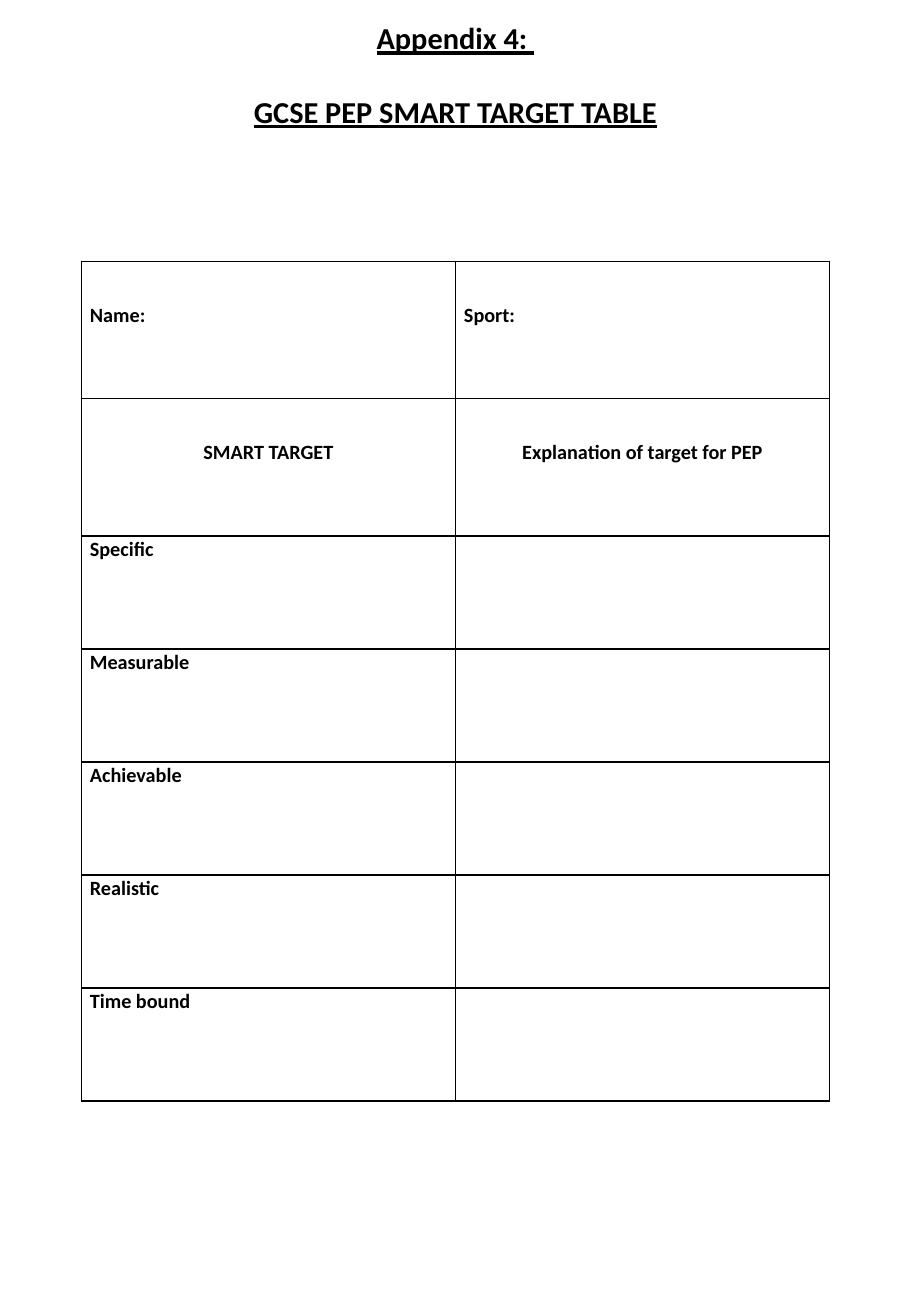
from lxml import etree
from pptx import Presentation
from pptx import util as u
from pptx.dml.color import RGBColor
from pptx.enum import text
from pptx.oxml import ns

PAGE_SIZE = (7.5, 10.83)
INK, FONT = "000000", "Calibri"
TITLE = ["Appendix 4: ", "GCSE PEP SMART TARGET TABLE"]
TITLE_BOX = (1.71, 0.11, 4.08, 1.31)
HEADINGS = [("Name:", "Sport:"), ("SMART TARGET", "Explanation of target for PEP")]
TARGETS = ["Specific", "Measurable", "Achievable", "Realistic", "Time bound"]
ROWS = HEADINGS + [(target, "") for target in TARGETS]
TABLE_LEFT, TABLE_TOP, COLUMN_WIDTH = 0.67, 2.15, 3.08
HEADING_HEIGHT, TARGET_HEIGHT = 1.13, 0.93
HEADING_INSET, SIDE_INSET = 0.33, 0.07
CENTRED_ROW = 1


def colour(value):
    return RGBColor.from_string(value)


def style(para, size, align, spacing, after):
    para.alignment = align
    para.line_spacing = spacing
    para.space_before, para.space_after = u.Pt(0), u.Pt(after)
    para.font.name, para.font.size, para.font.bold = FONT, u.Pt(size), True
    para.font.color.rgb = colour(INK)


def add_borders(cell):
    properties = cell._tc.get_or_add_tcPr()
    for index, side in enumerate(("lnL", "lnR", "lnT", "lnB")):
        line = etree.Element(ns.qn(f"a:{side}"), w=str(u.Pt(1)))
        fill = etree.SubElement(line, ns.qn("a:solidFill"))
        etree.SubElement(fill, ns.qn("a:srgbClr"), val=INK)
        properties.insert(index, line)


def add_title(page):
    title = page.shapes.title
    title.left, title.top, title.width, title.height = map(u.Inches, TITLE_BOX)
    frame = title.text_frame
    frame.word_wrap = True
    frame.auto_size = text.MSO_AUTO_SIZE.NONE
    frame.vertical_anchor = text.MSO_ANCHOR.TOP
    frame.text = "\n".join(TITLE)
    for para in frame.paragraphs:
        style(para, 18, text.PP_ALIGN.CENTER, 1.0, 22)
        para.font.underline = True


def add_target_table(page):
    heights = [HEADING_HEIGHT] * len(HEADINGS) + [TARGET_HEIGHT] * len(TARGETS)
    columns = len(ROWS[0])
    extent = (TABLE_LEFT, TABLE_TOP, columns * COLUMN_WIDTH, sum(heights))
    table = page.shapes.add_table(len(ROWS), columns, *map(u.Inches, extent)).table
    table.first_row = table.horz_banding = False
    for row, (labels, height) in enumerate(zip(ROWS, heights)):
        table.rows[row].height = u.Inches(height)
        align = text.PP_ALIGN.CENTER if row == CENTRED_ROW else text.PP_ALIGN.LEFT
        for column, label in enumerate(labels):
            cell = table.cell(row, column)
            cell.margin_left = cell.margin_right = u.Inches(SIDE_INSET)
            cell.margin_top = u.Inches(HEADING_INSET if row < len(HEADINGS) else 0)
            cell.margin_bottom = 0
            cell.fill.background()
            add_borders(cell)
            cell.text = label
            style(cell.text_frame.paragraphs[0], 12, align, 1.07, 8)


def main():
    """Build the SMART target worksheet."""
    deck = Presentation()
    deck.slide_width, deck.slide_height = map(u.Inches, PAGE_SIZE)
    page = deck.slides.add_slide(deck.slide_layouts[5])
    add_target_table(page)
    add_title(page)
    deck.save("out.pptx")


if __name__ == "__main__":
    main()
